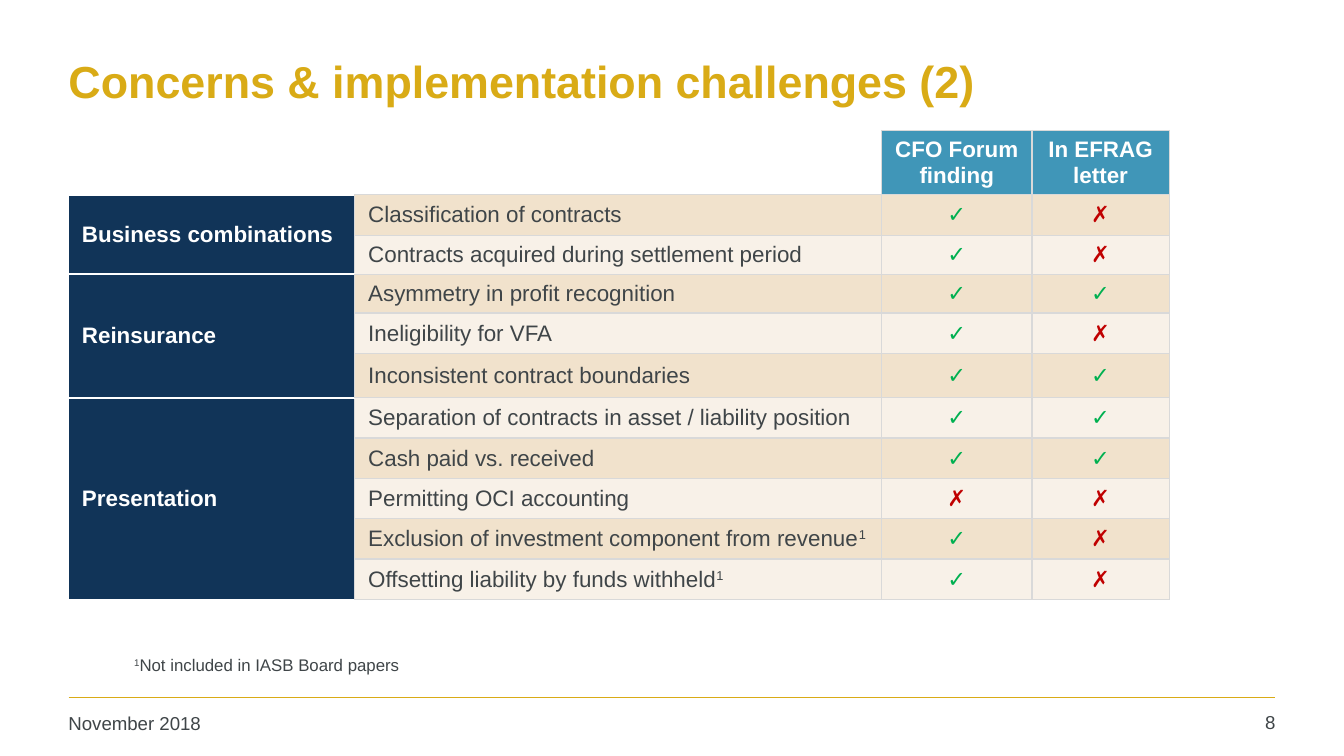
from pptx import Presentation
from pptx.dml.color import RGBColor
from pptx.enum.shapes import MSO_CONNECTOR
from pptx.enum.text import MSO_ANCHOR as ANCHOR, PP_ALIGN as ALIGN
from pptx.oxml import parse_xml
from pptx.oxml.ns import nsdecls
from pptx.util import Inches, Pt

GOLD = RGBColor(0xD9, 0xAB, 0x16)
NAVY = RGBColor(0x11, 0x34, 0x58)
TEAL = RGBColor(0x40, 0x96, 0xB8)
TEXT = RGBColor(0x3F, 0x45, 0x48)
WHITE = RGBColor(0xFF, 0xFF, 0xFF)
GREY = RGBColor(0xD9, 0xD9, 0xD9)
GREEN = RGBColor(0x00, 0xB0, 0x50)
RED = RGBColor(0xC0, 0x00, 0x00)
BANDS = [RGBColor(0xF1, 0xE2, 0xCC), RGBColor(0xF8, 0xF1, 0xE8)]
MARKS = {"✓": GREEN, "✗": RED}

HEADERS = ["CFO Forum finding", "In EFRAG letter"]
# Each topic: (text, footnote mark, one mark per header)
GROUPS = {
    "Business combinations": [
        ("Classification of contracts", "", "✓✗"),
        ("Contracts acquired during settlement period", "", "✓✗"),
    ],
    "Reinsurance": [
        ("Asymmetry in profit recognition", "", "✓✓"),
        ("Ineligibility for VFA", "", "✓✗"),
        ("Inconsistent contract boundaries", "", "✓✓"),
    ],
    "Presentation": [
        ("Separation of contracts in asset / liability position", "", "✓✓"),
        ("Cash paid vs. received", "", "✓✓"),
        ("Permitting OCI accounting", "", "✗✗"),
        ("Exclusion of investment component from revenue", "1", "✓✗"),
        ("Offsetting liability by funds withheld", "1", "✓✗"),
    ],
}
COL_WIDTHS = [2.13, 3.92, 1.12, 1.02]
ROW_HEIGHTS = [0.48, 0.3, 0.29, 0.29, 0.3, 0.33] + [0.3] * 5


class SlideBuilder:
    font = "Arial"

    def __init__(self, prs):
        self.s = prs.slides.add_slide(prs.slide_layouts[6])

    def runs(self, p, parts, size, color, bold=False, align=ALIGN.LEFT):
        """Fill a paragraph from (text, is_superscript) parts."""
        p.alignment = align
        for text, raised in parts:
            r = p.add_run()
            r.text = text
            style = {"name": self.font, "size": Pt(size), "bold": bold}
            for key, value in style.items():
                setattr(r.font, key, value)
            r.font.color.rgb = color
            if raised:
                r._r.get_or_add_rPr().set("baseline", "30000")

    def text(self, box, parts, size, color, bold=False, align=ALIGN.LEFT,
             anchor=ANCHOR.TOP, margins=(0.08, 0.04)):
        tf = self.s.shapes.add_textbox(*map(Inches, box)).text_frame
        mx, my = map(Inches, margins)
        style = {"word_wrap": True, "vertical_anchor": anchor,
                 "margin_left": mx, "margin_right": mx,
                 "margin_top": my, "margin_bottom": my}
        for key, value in style.items():
            setattr(tf, key, value)
        self.runs(tf.paragraphs[0], parts, size, color, bold, align)
        return tf

    def line(self, x1, y1, x2, y2, color, width):
        c = self.s.shapes.add_connector(
            MSO_CONNECTOR.STRAIGHT, *map(Inches, (x1, y1, x2, y2)))
        c.line.color.rgb = color
        c.line.width = Pt(width)
        c._element.spPr.append(parse_xml(f"<a:effectLst {nsdecls('a')}/>"))

    def table(self, x, y, widths, heights):
        shape = self.s.shapes.add_table(
            len(heights), len(widths), Inches(x), Inches(y),
            Inches(sum(widths)), Inches(sum(heights)))
        tbl = shape.table
        tbl.first_row = tbl.horz_banding = False
        for col, width in zip(tbl.columns, widths):
            col.width = Inches(width)
        for row, height in zip(tbl.rows, heights):
            row.height = Inches(height)
        return tbl

    def cell(self, cell, parts=(), fill=None, color=TEXT, bold=False,
             align=ALIGN.LEFT, white_sides=""):
        style = {"vertical_anchor": ANCHOR.MIDDLE,
                 "margin_top": Inches(0.04), "margin_bottom": Inches(0.04)}
        for key, value in style.items():
            setattr(cell, key, value)
        self.runs(cell.text_frame.paragraphs[0], parts, 12, color, bold, align)
        if fill is None:
            cell.fill.background()
        else:
            cell.fill.solid()
            cell.fill.fore_color.rgb = fill
        # Borders come before the fill in the cell properties
        for i, side in enumerate("LRTB"):
            rgb, pt = (WHITE, 1) if side in white_sides else (GREY, 0.75)
            cell._tc.get_or_add_tcPr().insert(i, parse_xml(
                f'<a:ln{side} {nsdecls("a")} w="{Pt(pt)}"><a:solidFill>'
                f'<a:srgbClr val="{rgb}"/></a:solidFill></a:ln{side}>'))


def main():
    prs = Presentation()
    prs.slide_width, prs.slide_height = Inches(10), Inches(10 * 9 / 16)
    b = SlideBuilder(prs)

    # Title, with a line break that lifts it above the middle
    tf = b.text((0.43, 0.33, 9.07, 0.94),
                [("Concerns & implementation challenges (2)", False)],
                24, GOLD, bold=True, anchor=ANCHOR.MIDDLE)
    tf.paragraphs[0].add_line_break()
    tf.paragraphs[0].font.size = Pt(24)

    # Table header
    tbl = b.table(0.51, 0.97, COL_WIDTHS, ROW_HEIGHTS)
    b.cell(tbl.cell(0, 0), white_sides="LRTB")
    b.cell(tbl.cell(0, 1), white_sides="LT")
    for col, header in enumerate(HEADERS, 2):
        b.cell(tbl.cell(0, col), [(header, False)], TEAL, WHITE, True,
               ALIGN.CENTER)

    # Table body: one merged navy cell per group, banded topic rows
    row = 1
    for group, topics in GROUPS.items():
        first = row
        for topic, note, marks in topics:
            band = BANDS[(row - 1) % 2]
            label = [(group, False)] if row == first else []
            b.cell(tbl.cell(row, 0), label, NAVY, WHITE, True,
                   white_sides="LTB")
            parts = [(topic, False)] + ([(note, True)] if note else [])
            b.cell(tbl.cell(row, 1), parts, band)
            for col, mark in enumerate(marks, 2):
                b.cell(tbl.cell(row, col), [(mark, False)], band, MARKS[mark],
                       True, ALIGN.CENTER)
            row += 1
        tbl.cell(first, 0).merge(tbl.cell(row - 1, 0))

    # Footnote and footer
    b.text((0.9, 4.82, 3.25, 0.25),
           [("1", True), ("Not included in IASB Board papers", False)],
           9, TEXT, margins=(0.1, 0.05))
    b.line(0.51, 5.19, 9.49, 5.19, GOLD, 1)
    b.text((0.43, 5.26, 2.2, 0.27), [("November 2018", False)], 10, TEXT)
    b.text((8.86, 5.25, 0.71, 0.28), [("8", False)], 10, TEXT,
           align=ALIGN.RIGHT)

    prs.save("out.pptx")


if __name__ == "__main__":
    main()
